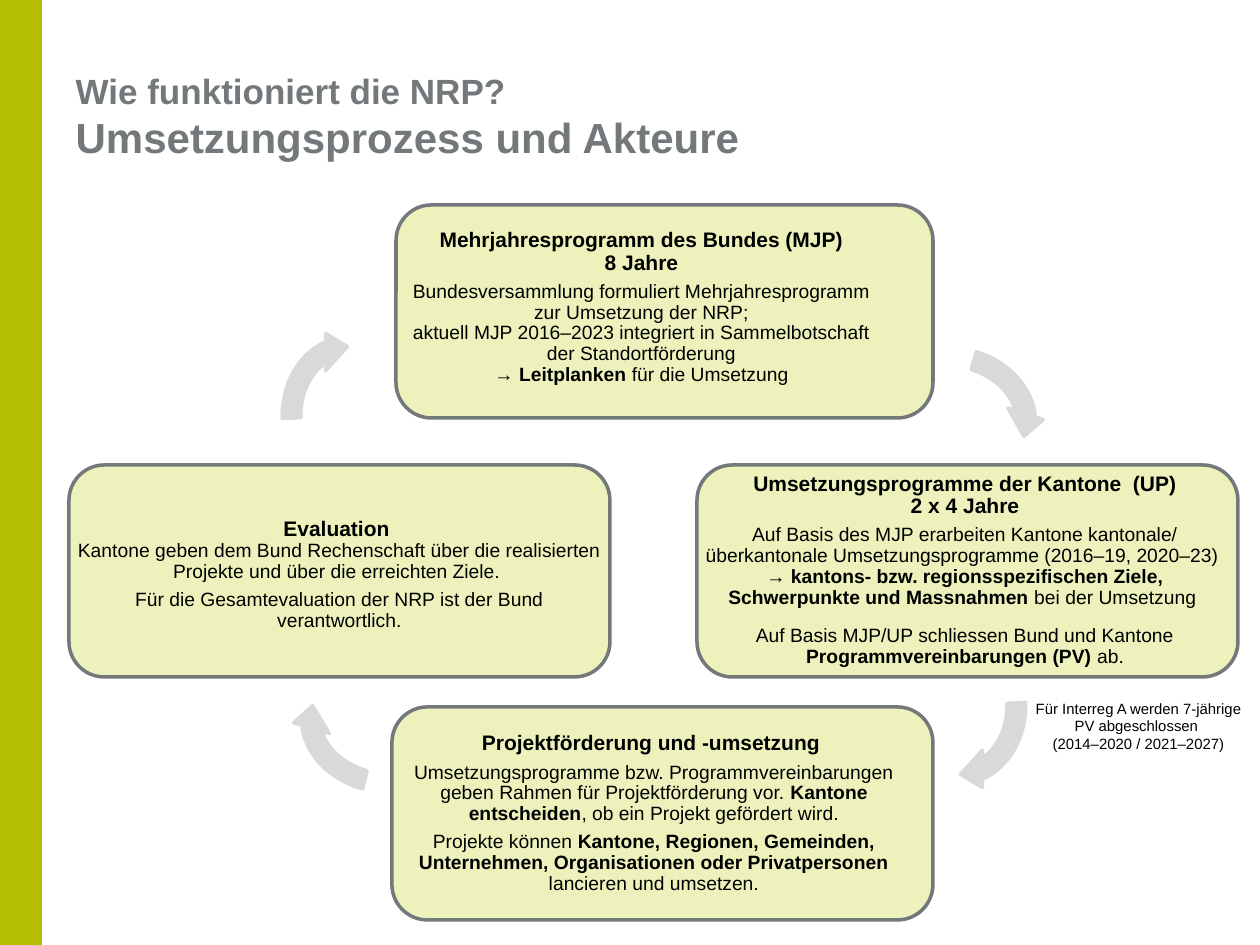
import copy
import pptx
import pptx.util
import pptx.dml.color
import pptx.enum.shapes
import pptx.enum.text

RGB = pptx.dml.color.RGBColor
SHAPES = pptx.enum.shapes.MSO_SHAPE
ALIGN = pptx.enum.text.PP_ALIGN
ANCHOR = pptx.enum.text.MSO_ANCHOR
Pt = pptx.util.Pt

LIME = RGB(0xB4, 0xBE, 0x00)
PALE_LIME = RGB(0xED, 0xF2, 0xBC)
SLATE = RGB(0x73, 0x78, 0x7B)
LIGHT_GREY = RGB(0xD9, 0xD9, 0xD9)
BLACK = RGB(0, 0, 0)

FONT = "Arial"
EMU_PER_PX = 914400 / 126
HEAD, BODY, NOTE = 12, 11, 8.5
GAP, WIDE_GAP = 4, 10

TITLE = [("Wie funktioniert die NRP?\n", 20, True), ("Umsetzungsprozess und Akteure", 24, True)]

PANELS = [
    {"frame": (69, 465, 541, 212), "text": (69, 475, 541, 200), "anchor": ANCHOR.MIDDLE, "paragraphs": [
        ([("Evaluation \n", HEAD, True),
          ("Kantone geben dem Bund Rechenschaft über die realisierten "
           "Projekte und über die erreichten Ziele. ", BODY, False)], GAP),
        ([("Für die Gesamtevaluation der NRP ist der Bund verantwortlich.", BODY, False)], GAP),
    ]},
    {"frame": (396, 205, 537, 213), "text": (392, 209, 499, 197), "anchor": ANCHOR.MIDDLE, "paragraphs": [
        ([("Mehrjahresprogramm des Bundes (MJP)\n8 Jahre", HEAD, True)], GAP),
        ([("Bundesversammlung formuliert Mehrjahresprogramm zur Umsetzung der NRP;\n"
           "aktuell MJP 2016–2023 integriert in Sammelbotschaft der Standortförderung\n→ ", BODY, False),
          ("Leitplanken ", BODY, True),
          ("für die Umsetzung", BODY, False)], GAP),
    ]},
    {"frame": (697, 465, 541, 212), "text": (697, 467, 536, 207), "anchor": ANCHOR.TOP, "paragraphs": [
        ([("Umsetzungsprogramme der Kantone  (UP)\n2 x 4 Jahre", HEAD, True)], GAP),
        ([("Auf Basis des MJP erarbeiten Kantone kantonale/ überkantonale "
           "Umsetzungsprogramme (2016–19, 2020–23) \n", BODY, False),
          ("→ kantons- bzw. regionsspezifischen Ziele, Schwerpunkte und Massnahmen ", BODY, True),
          ("bei der Umsetzung ", BODY, False)], WIDE_GAP),
        ([("Auf Basis MJP/UP schliessen Bund und Kantone ", BODY, False),
          ("Programmvereinbarungen (PV) ", BODY, True),
          ("ab.", BODY, False)], GAP),
    ]},
    {"frame": (392, 707, 541, 213), "text": (392, 707, 524, 213), "anchor": ANCHOR.MIDDLE, "paragraphs": [
        ([("Projektförderung und -umsetzung ", HEAD, True)], GAP),
        ([("Umsetzungsprogramme bzw. Programmvereinbarungen geben Rahmen "
           "für Projektförderung vor. ", BODY, False),
          ("Kantone entscheiden", BODY, True),
          (", ob ein Projekt gefördert wird.", BODY, False)], GAP),
        ([("Projekte können ", BODY, False),
          ("Kantone, Regionen, Gemeinden, Unternehmen, Organisationen oder Privatpersonen", BODY, True),
          (" lancieren und umsetzen.", BODY, False)], GAP),
    ]},
]

ARROW_SIZE = (175, 149)
ARROW_ADJUSTMENTS = (0.125, 11.42, 204.58, 160.43, 0.125)
ARROWS = [(291, 651, 196.8), (873, 631, 90), (871, 340, 18.5), (260, 341, 270)]

INTERREG_NOTE = [("Für Interreg A werden 7-jährige PV abgeschlossen \n(2014–2020 / 2021–2027)", NOTE, False)]


def px(*lengths):
    return [round(length * EMU_PER_PX) for length in lengths]


def write(paragraph, runs, color, align):
    paragraph.alignment = align
    for text, size, bold in runs:
        for index, line in enumerate(text.split("\n")):
            if index:
                paragraph.add_line_break()
                paragraph._p[-1].append(copy.deepcopy(run._r.rPr))
            if line:
                run = paragraph.add_run()
                run.text = line
                run.font.name = FONT
                run.font.size = Pt(size)
                run.font.bold = bold
                run.font.color.rgb = color


def add_shape(slide, kind, box, fill, line=None):
    shape = slide.shapes.add_shape(kind, *px(*box))
    shape.shadow.inherit = False
    shape.fill.solid()
    shape.fill.fore_color.rgb = fill
    if line is None:
        shape.line.fill.background()
    else:
        shape.line.color.rgb = line
        shape.line.width = Pt(2)
    return shape


def add_text_frame(slide, box, anchor):
    frame = slide.shapes.add_textbox(*px(*box)).text_frame
    frame.word_wrap = True
    frame.vertical_anchor = anchor
    return frame


def add_panel(slide, panel):
    add_shape(slide, SHAPES.ROUNDED_RECTANGLE, panel["frame"], PALE_LIME, SLATE)
    frame = add_text_frame(slide, panel["text"], panel["anchor"])
    frame.margin_left = frame.margin_right = frame.margin_top = frame.margin_bottom = px(6)[0]
    for index, (runs, gap) in enumerate(panel["paragraphs"]):
        paragraph = frame.add_paragraph() if index else frame.paragraphs[0]
        paragraph.line_spacing = 0.9
        paragraph.space_after = Pt(gap)
        write(paragraph, runs, BLACK, ALIGN.CENTER)


def main():
    deck = pptx.Presentation()
    deck.slide_width, deck.slide_height = px(1260, 945)
    slide = deck.slides.add_slide(deck.slide_layouts[5])

    add_shape(slide, SHAPES.RECTANGLE, (0, 0, 42, 945), LIME)

    title = slide.shapes.title
    title.left, title.top, title.width, title.height = px(63, 76, 1168, 79)
    title.text_frame.vertical_anchor = ANCHOR.MIDDLE
    title.text_frame.auto_size = pptx.enum.text.MSO_AUTO_SIZE.NONE
    write(title.text_frame.paragraphs[0], TITLE, SLATE, ALIGN.LEFT)

    for panel in PANELS:
        add_panel(slide, panel)

    for left, top, rotation in ARROWS:
        arrow = add_shape(slide, SHAPES.CIRCULAR_ARROW, (left, top, *ARROW_SIZE), LIGHT_GREY, LIGHT_GREY)
        arrow.rotation = rotation
        for index, value in enumerate(ARROW_ADJUSTMENTS):
            arrow.adjustments[index] = value

    note = add_text_frame(slide, (1017, 693, 243, 67), ANCHOR.TOP)
    write(note.paragraphs[0], INTERREG_NOTE, BLACK, ALIGN.CENTER)

    deck.save("out.pptx")


if __name__ == "__main__":
    main()
